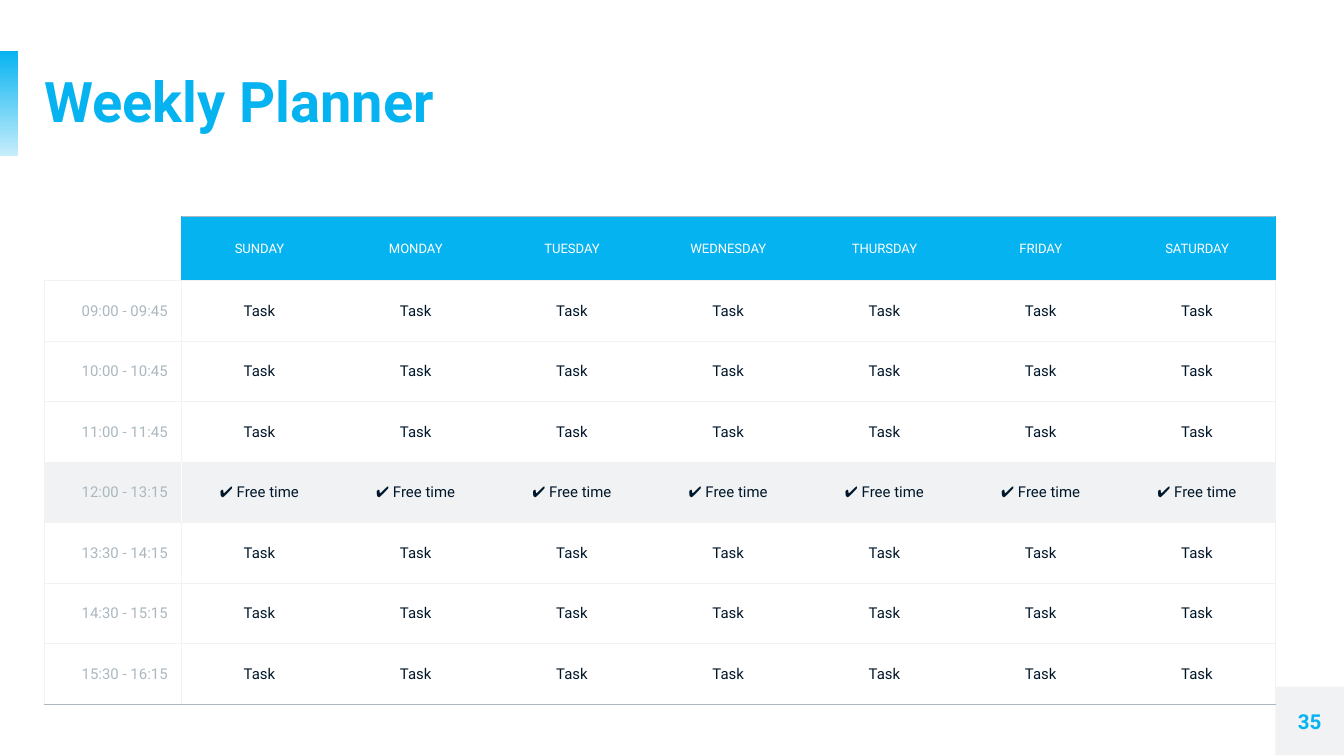
from pptx import Presentation
from pptx.dml.color import RGBColor
from pptx.enum.shapes import MSO_SHAPE
from pptx.enum.text import MSO_ANCHOR, PP_ALIGN
from pptx.oxml.ns import qn
from pptx.util import Inches, Pt
from lxml import etree

RECTANGLE = MSO_SHAPE.RECTANGLE
MIDDLE = MSO_ANCHOR.MIDDLE
LEFT, CENTER, RIGHT = PP_ALIGN.LEFT, PP_ALIGN.CENTER, PP_ALIGN.RIGHT

BLUE = RGBColor(0x05, 0xB3, 0xF1)
PALE = RGBColor(0xF0, 0xF2, 0xF3)
GRAY = RGBColor(0xAB, 0xB8, 0xC0)
NAVY = RGBColor(0x00, 0x16, 0x2A)
WHITE = RGBColor(0xFF, 0xFF, 0xFF)

FONT = "Roboto"
DAYS = ["SUNDAY", "MONDAY", "TUESDAY", "WEDNESDAY", "THURSDAY", "FRIDAY", "SATURDAY"]
TIMES = ["09:00 - 09:45", "10:00 - 10:45", "11:00 - 11:45", "12:00 - 13:15",
         "13:30 - 14:15", "14:30 - 15:15", "15:30 - 16:15"]
BREAK_ROW = 4
LAST_LINE = 8

PLANNER_WIDTH = 9.16
TIME_WIDTH = 1.02
DAY_WIDTH = (PLANNER_WIDTH - TIME_WIDTH) / len(DAYS)
HEADER_HEIGHT = 0.36
SLOT_HEIGHT = 0.45


def write(frame, text, size, color, align, bold=False):
    paragraph = frame.paragraphs[0]
    paragraph.alignment = align
    run = paragraph.add_run()
    run.text = text
    run.font.name = FONT
    run.font.size = Pt(size)
    run.font.bold = bold
    run.font.color.rgb = color
    return paragraph


def add_block(slide, left, top, width, height):
    block = slide.shapes.add_shape(
        RECTANGLE, Inches(left), Inches(top), Inches(width), Inches(height))
    block.shadow.inherit = False
    block.line.fill.background()
    return block


def add_accent(slide):
    accent = add_block(slide, -0.01, 0.38, 0.14, 0.78)
    accent.fill.gradient()
    accent.fill.gradient_angle = 90
    for stop in accent.fill.gradient_stops:
        stop.color.rgb = BLUE
    faded = accent.element.find(".//" + qn("a:gs")).find(qn("a:srgbClr"))
    etree.SubElement(faded, qn("a:alpha"), val="22000")


def add_label(slide, left, top, width, height, text, size, align):
    label = slide.shapes.add_textbox(
        Inches(left), Inches(top), Inches(width), Inches(height))
    frame = label.text_frame
    frame.word_wrap = True
    frame.vertical_anchor = MIDDLE
    frame.margin_left = frame.margin_right = 0
    frame.margin_top = frame.margin_bottom = 0
    return write(frame, text, size, BLUE, align, bold=True)


def upright_color(row, line):
    if line not in (0, 1, LAST_LINE):
        return None
    if row == 0:
        return BLUE if line else None
    return WHITE if row == BREAK_ROW and line == 1 else PALE


def level_color(column, line):
    if line == 0:
        return GRAY if column else None
    return GRAY if line == LAST_LINE else PALE


def set_borders(cell, row, column):
    properties = cell._tc.get_or_add_tcPr()
    borders = {
        "a:lnL": upright_color(row, column),
        "a:lnR": upright_color(row, column + 1),
        "a:lnT": level_color(column, row),
        "a:lnB": level_color(column, row + 1),
    }
    for tag, color in borders.items():
        border = etree.SubElement(properties, qn(tag), w=str(Pt(0.75)))
        if color is None:
            etree.SubElement(border, qn("a:noFill"))
        else:
            fill = etree.SubElement(border, qn("a:solidFill"))
            etree.SubElement(fill, qn("a:srgbClr"), val=str(color))


def set_fill(cell, row, column):
    if row == 0 and column:
        cell.fill.solid()
        cell.fill.fore_color.rgb = BLUE
    elif row == BREAK_ROW:
        cell.fill.solid()
        cell.fill.fore_color.rgb = PALE
    else:
        cell.fill.background()


def fill_cell(cell, row, column):
    cell.vertical_anchor = MIDDLE
    cell.margin_left = cell.margin_right = Inches(0.1)
    cell.margin_top = cell.margin_bottom = Inches(0.1 if row or column else 0.09)
    set_borders(cell, row, column)
    set_fill(cell, row, column)
    if row and column:
        activity = "✔ Free time" if row == BREAK_ROW else "Task"
        write(cell.text_frame, activity, 8, NAVY, CENTER)
    elif row:
        write(cell.text_frame, TIMES[row - 1], 8, GRAY, RIGHT)
    elif column:
        write(cell.text_frame, DAYS[column - 1], 7, WHITE, CENTER)


def add_planner(slide):
    rows, columns = len(TIMES) + 1, len(DAYS) + 1
    height = HEADER_HEIGHT + SLOT_HEIGHT * len(TIMES)
    planner = slide.shapes.add_table(
        rows, columns, Inches(0.33), Inches(1.61),
        Inches(PLANNER_WIDTH), Inches(height)).table
    planner.first_row = False
    planner.horz_banding = False
    for column in range(columns):
        planner.columns[column].width = Inches(DAY_WIDTH if column else TIME_WIDTH)
    for row in range(rows):
        planner.rows[row].height = Inches(SLOT_HEIGHT if row else HEADER_HEIGHT)
        for column in range(columns):
            fill_cell(planner.cell(row, column), row, column)


def main():
    deck = Presentation()
    deck.slide_width = Inches(10)
    deck.slide_height = Inches(10 * 9 / 16)
    slide = deck.slides.add_slide(deck.slide_layouts[6])

    add_accent(slide)
    page_corner = add_block(slide, 9.49, 5.11, 0.51, 0.51)
    page_corner.fill.solid()
    page_corner.fill.fore_color.rgb = PALE
    title = add_label(slide, 0.33, 0.39, 9.27, 0.77, "Weekly Planner", 30, LEFT)
    title.line_spacing = 0.9
    add_label(slide, 9.49, 5.11, 0.51, 0.51, "35", 11, CENTER)
    add_planner(slide)

    deck.save("out.pptx")


if __name__ == "__main__":
    main()
